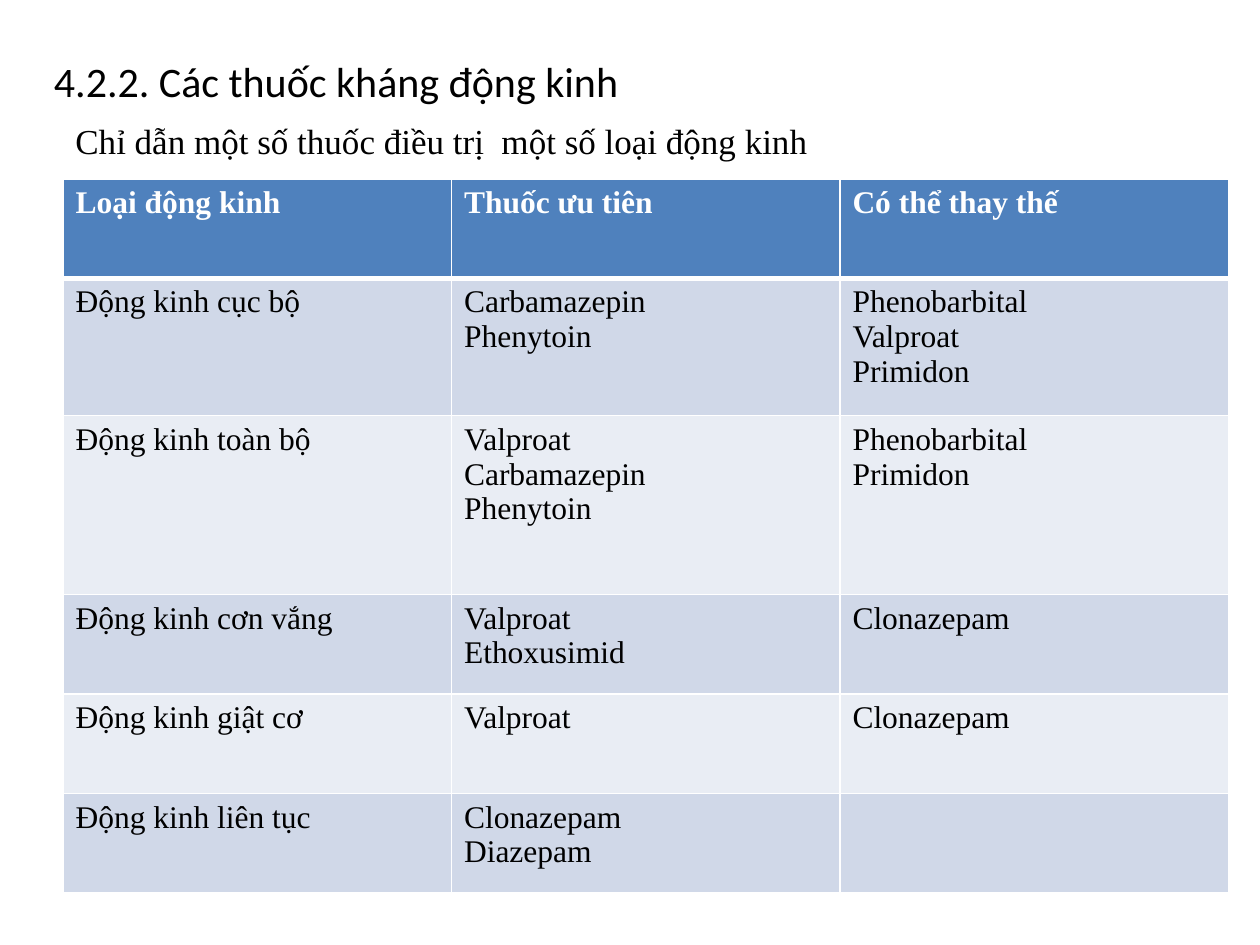
from lxml import etree
from pptx import Presentation
from pptx.dml.color import RGBColor
from pptx.enum.text import MSO_AUTO_SIZE
from pptx.oxml.ns import qn
from pptx.util import Inches, Pt

FIT = MSO_AUTO_SIZE.SHAPE_TO_FIT_TEXT

# Content
TITLE = "4.2.2. Các thuốc kháng động kinh"
LEAD = "Chỉ dẫn một số thuốc điều trị  một số loại động kinh"
HEAD = ["Loại động kinh", "Thuốc ưu tiên", "Có thể thay thế"]
BODY = [
    ("Động kinh cục bộ", ["Carbamazepin", "Phenytoin"],
     ["Phenobarbital", "Valproat", "Primidon"]),
    ("Động kinh toàn bộ", ["Valproat", "Carbamazepin", "Phenytoin"],
     ["Phenobarbital", "Primidon"]),
    ("Động kinh cơn vắng", ["Valproat", "Ethoxusimid"], ["Clonazepam"]),
    ("Động kinh giật cơ", ["Valproat"], ["Clonazepam"]),
    ("Động kinh liên tục", ["Clonazepam", "Diazepam"], []),
]

# Look
THEME = {
    "sans": "Calibri", "serif": "Times New Roman",
    "title": 24, "lead": 20, "cell": 18,
    "ink": "000000", "white": "FFFFFF",
    "head": "4F81BD", "bands": ["D0D8E8", "E9EDF4"],
    "thin": 1, "thick": 3,
}

# Layout in inches
WIDE, HIGH = 10, 7.5
LEFT, TOP, SPAN = 0.5, 1.42, 9.25
BASE = 0.79
ROWS = [BASE, 1.09, 1.42] + [BASE] * 3


def write(frame, lines, size, font=THEME["serif"], color=THEME["ink"],
          bold=False):
    """Put one paragraph per line into a text frame."""
    for i, line in enumerate(lines):
        para = frame.paragraphs[0] if i == 0 else frame.add_paragraph()
        run = para.add_run()
        run.text = line
        run.font.size = Pt(size)
        run.font.name = font
        run.font.bold = bold
        run.font.color.rgb = RGBColor.from_string(color)


def add_box(slide, area, text, **style):
    box = slide.shapes.add_textbox(*[Inches(v) for v in area])
    box.text_frame.word_wrap = True
    box.text_frame.auto_size = FIT
    write(box.text_frame, [text], **style)


def edge(cell, side, width):
    props = cell._tc.get_or_add_tcPr()
    line = etree.SubElement(props, qn(f"a:ln{side}"), w=str(Pt(width)))
    fill = etree.SubElement(line, qn("a:solidFill"))
    etree.SubElement(fill, qn("a:srgbClr"), val=THEME["white"])


def add_grid(slide):
    data = [[[name] for name in HEAD]]
    data += [[[kind], first, other] for kind, first, other in BODY]
    grid = slide.shapes.add_table(
        len(data), len(HEAD), Inches(LEFT), Inches(TOP),
        Inches(SPAN), Inches(sum(ROWS))).table
    grid.horz_banding = False
    for col in grid.columns:
        col.width = Inches(SPAN / len(HEAD))
    for r, row in enumerate(data):
        grid.rows[r].height = Inches(ROWS[r])
        top = r == 0
        tint = THEME["head"] if top else THEME["bands"][(r - 1) % 2]
        for c, lines in enumerate(row):
            cell = grid.cell(r, c)
            # Borders go before the fill in the cell's XML
            for side in "LRTB":
                heavy = (r, side) in [(0, "B"), (1, "T")]
                edge(cell, side, THEME["thick" if heavy else "thin"])
            cell.fill.solid()
            cell.fill.fore_color.rgb = RGBColor.from_string(tint)
            write(cell.text_frame, lines, THEME["cell"], bold=top,
                  color=THEME["white" if top else "ink"])


def main():
    deck = Presentation()
    deck.slide_width, deck.slide_height = Inches(WIDE), Inches(HIGH)
    slide = deck.slides.add_slide(deck.slide_layouts[6])
    # Table, then the two headings above it
    add_grid(slide)
    add_box(slide, (0.33, 0.39, 6.17, 0.5), TITLE,
            size=THEME["title"], font=THEME["sans"])
    add_box(slide, (LEFT, 0.9, 8.33, 0.44), LEAD, size=THEME["lead"])
    deck.save("out.pptx")


if __name__ == "__main__":
    main()
